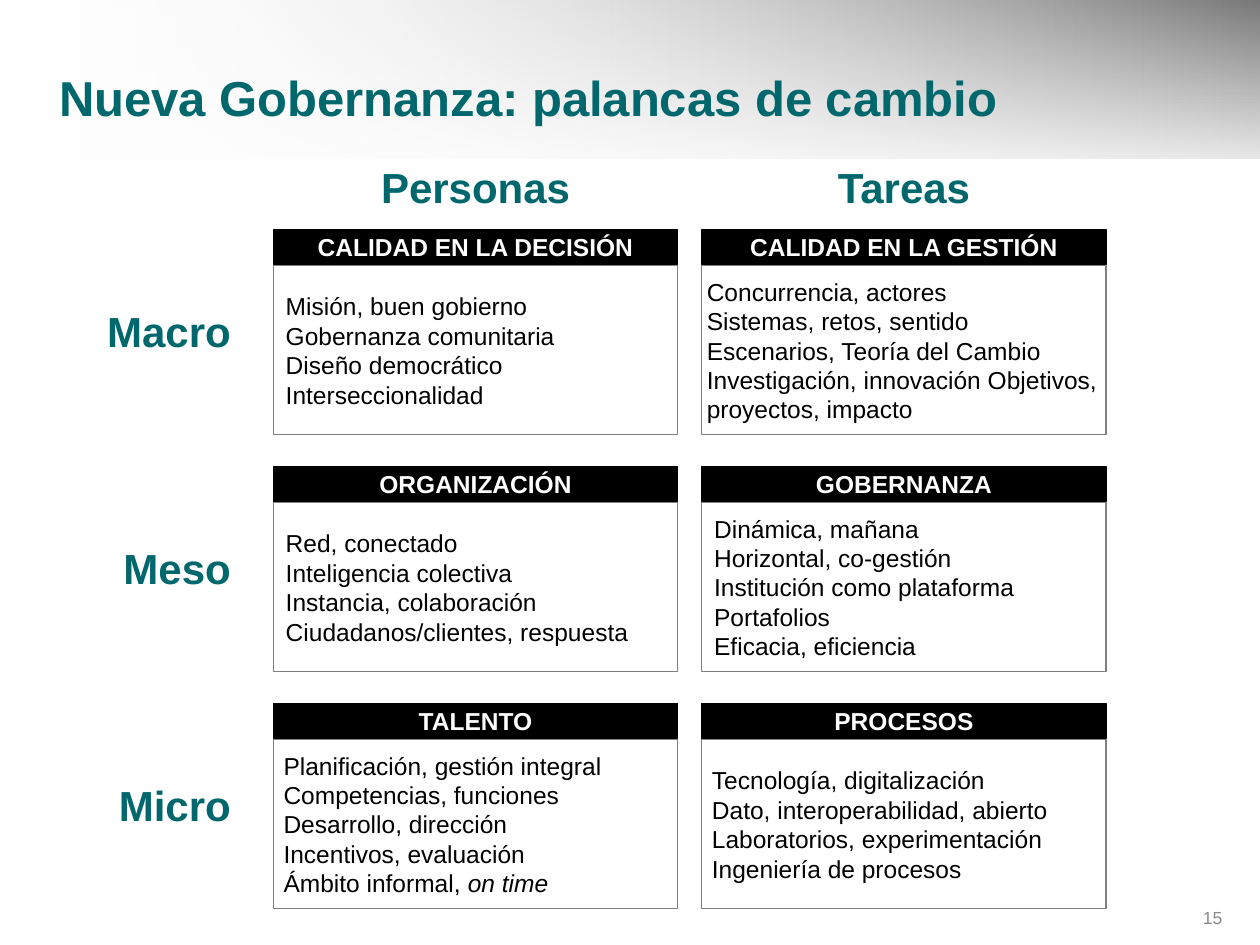
from lxml.etree import SubElement
from pptx import Presentation
from pptx.dml.color import RGBColor
from pptx.enum.shapes import MSO_SHAPE
from pptx.enum.text import MSO_ANCHOR as Anchor, MSO_AUTO_SIZE as AutoSize, PP_ALIGN as Align
from pptx.oxml.ns import qn
from pptx.util import Pt

TITLE = "Nueva Gobernanza: palancas de cambio"
PAGE_NUMBER = "15"
COLUMNS = ["Personas", "Tareas"]
# Level, then one (heading, lines, side inset) card per column; *...* marks italics
LEVELS = [
    ("Macro", [
        ("CALIDAD EN LA DECISIÓN",
         ["Misión, buen gobierno", "Gobernanza comunitaria",
          "Diseño democrático", "Interseccionalidad"], 7.2),
        ("CALIDAD EN LA GESTIÓN",
         ["Concurrencia, actores", "Sistemas, retos, sentido",
          "Escenarios, Teoría del Cambio",
          "Investigación, innovación Objetivos, proyectos, impacto"], 2.9),
    ]),
    ("Meso", [
        ("ORGANIZACIÓN",
         ["Red, conectado", "Inteligencia colectiva",
          "Instancia, colaboración", "Ciudadanos/clientes, respuesta"], 7.2),
        ("GOBERNANZA",
         ["Dinámica, mañana", "Horizontal, co-gestión",
          "Institución como plataforma", "Portafolios",
          "Eficacia, eficiencia"], 7.2),
    ]),
    ("Micro", [
        ("TALENTO",
         ["Planificación, gestión integral", "Competencias, funciones",
          "Desarrollo, dirección", "Incentivos, evaluación",
          "Ámbito informal, *on time*"], 5.8),
        ("PROCESOS",
         ["Tecnología, digitalización", "Dato, interoperabilidad, abierto",
          "Laboratorios, experimentación", "Ingeniería de procesos"], 5.8),
    ]),
]
# Top bands: height, angle, (colour, opacity in %) from start to end
BANDS = [
    (90.7, 0, [("FFFFFF", 0), ("000000", 100)]),
    (108, 270, [("FFFFFF", 47), ("FFFFFF", 100)]),
]

TEAL, BLACK, WHITE, GRAY, PALE = "00676C", "000000", "FFFFFF", "7F7F7F", "898989"
SLIDE_W, SLIDE_H = 720, 540
GRID_LEFT, GRID_TOP = 156.2, 131
COLUMN_STEP, ROW_STEP = 244.8, 135.4
CARD_W, HEADING_H, BODY_OFFSET, BODY_H = 231.1, 20.2, 20.9, 96.5
LABEL_LEFT, LABEL_W, LABEL_H, LABEL_OFFSET = 5, 134, 36, 40.3
COLUMN_LABEL_TOP = 88.9


def rgb(value):
    return RGBColor.from_string(value)


def write(frame, lines, size, color, align=Align.LEFT, bold=False,
          anchor=Anchor.MIDDLE, inset=7.2):
    settings = {"word_wrap": True, "auto_size": AutoSize.NONE,
                "vertical_anchor": anchor, "margin_left": Pt(inset),
                "margin_right": Pt(inset), "margin_top": Pt(3.6),
                "margin_bottom": Pt(3.6)}
    for name, value in settings.items():
        setattr(frame, name, value)
    font_format = {"name": "Arial", "size": Pt(size), "bold": bold}
    for index, line in enumerate(lines):
        paragraph = frame.paragraphs[0] if index == 0 else frame.add_paragraph()
        paragraph.alignment = align
        for part, words in enumerate(line.split("*")):
            if not words:
                continue
            run = paragraph.add_run()
            run.text = words
            for name, value in font_format.items():
                setattr(run.font, name, value)
            run.font.color.rgb = rgb(color)
            if part % 2:
                run.font.italic = True


def add_label(slide, words, box, size=24, color=TEAL, align=Align.CENTER,
              bold=True, anchor=Anchor.TOP):
    label = slide.shapes.add_textbox(*map(Pt, box))
    write(label.text_frame, [words], size, color, align, bold, anchor)


def add_box(slide, box, fill, line):
    rect = slide.shapes.add_shape(MSO_SHAPE.RECTANGLE, *map(Pt, box))
    rect.shadow.inherit = False
    rect.fill.solid()
    rect.fill.fore_color.rgb = rgb(fill)
    rect.line.color.rgb = rgb(line)
    rect.line.width = Pt(0)
    return rect.text_frame


def add_band(slide, height, angle, stops):
    """Add a gradient band behind the title."""
    band = slide.shapes.add_shape(MSO_SHAPE.RECTANGLE, 0, 0, Pt(SLIDE_W), Pt(height))
    band.shadow.inherit = False
    band.line.fill.background()
    band.fill.gradient()
    band.fill.gradient_angle = angle
    for stop, (color, opacity) in zip(band.fill.gradient_stops, stops):
        stop.color.rgb = rgb(color)
    for node, (color, opacity) in zip(band.element.spPr.iter(qn("a:srgbClr")), stops):
        SubElement(node, qn("a:alpha"), val=str(opacity * 1000))
    slide.shapes.title.element.addprevious(band.element)


def add_card(slide, left, top, heading, lines, inset):
    body = add_box(slide, (left, top + BODY_OFFSET, CARD_W, BODY_H), WHITE, GRAY)
    write(body, lines, 14, BLACK, inset=inset)
    header = add_box(slide, (left, top, CARD_W, HEADING_H), BLACK, BLACK)
    write(header, [heading], 14, WHITE, Align.CENTER, bold=True)


def main():
    deck = Presentation()
    deck.slide_width, deck.slide_height = Pt(SLIDE_W), Pt(SLIDE_H)
    slide = deck.slides.add_slide(deck.slide_layouts[5])

    for band in BANDS:
        add_band(slide, *band)

    title = slide.shapes.title
    title.left, title.top, title.width, title.height = map(Pt, (26.6, 32.4, 662.4, 45.4))
    write(title.text_frame, [TITLE], 28, TEAL, bold=True)

    lefts = [GRID_LEFT + i * COLUMN_STEP for i in range(len(COLUMNS))]
    for left, column in zip(lefts, COLUMNS):
        add_label(slide, column, (left, COLUMN_LABEL_TOP, CARD_W, LABEL_H))
    for row, (level, cards) in enumerate(LEVELS):
        top = GRID_TOP + row * ROW_STEP
        add_label(slide, level, (LABEL_LEFT, top + LABEL_OFFSET, LABEL_W, LABEL_H),
                  align=Align.RIGHT)
        for left, card in zip(lefts, cards):
            add_card(slide, left, top, *card)

    add_label(slide, PAGE_NUMBER, (660.2, 514, 45.4, 20.9), size=10, color=PALE,
              align=Align.RIGHT, bold=False, anchor=Anchor.MIDDLE)
    deck.save("out.pptx")


if __name__ == "__main__":
    main()
